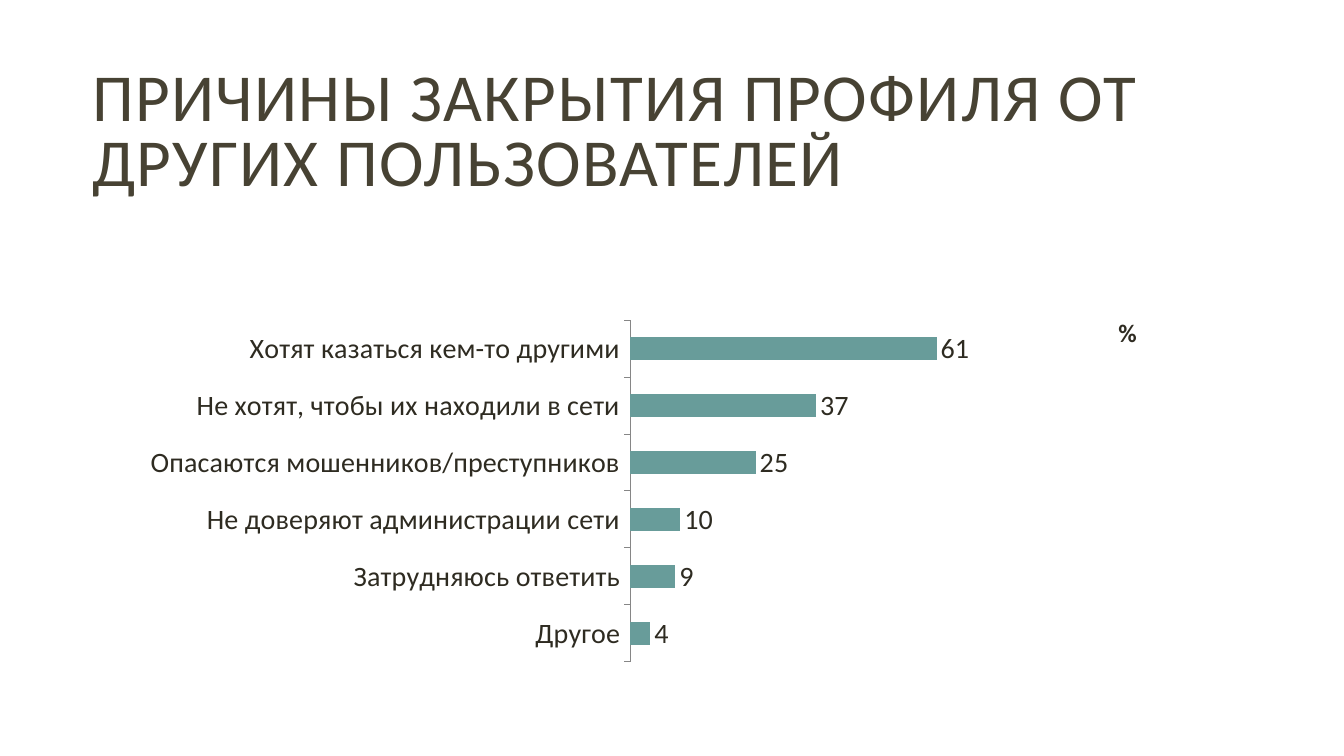
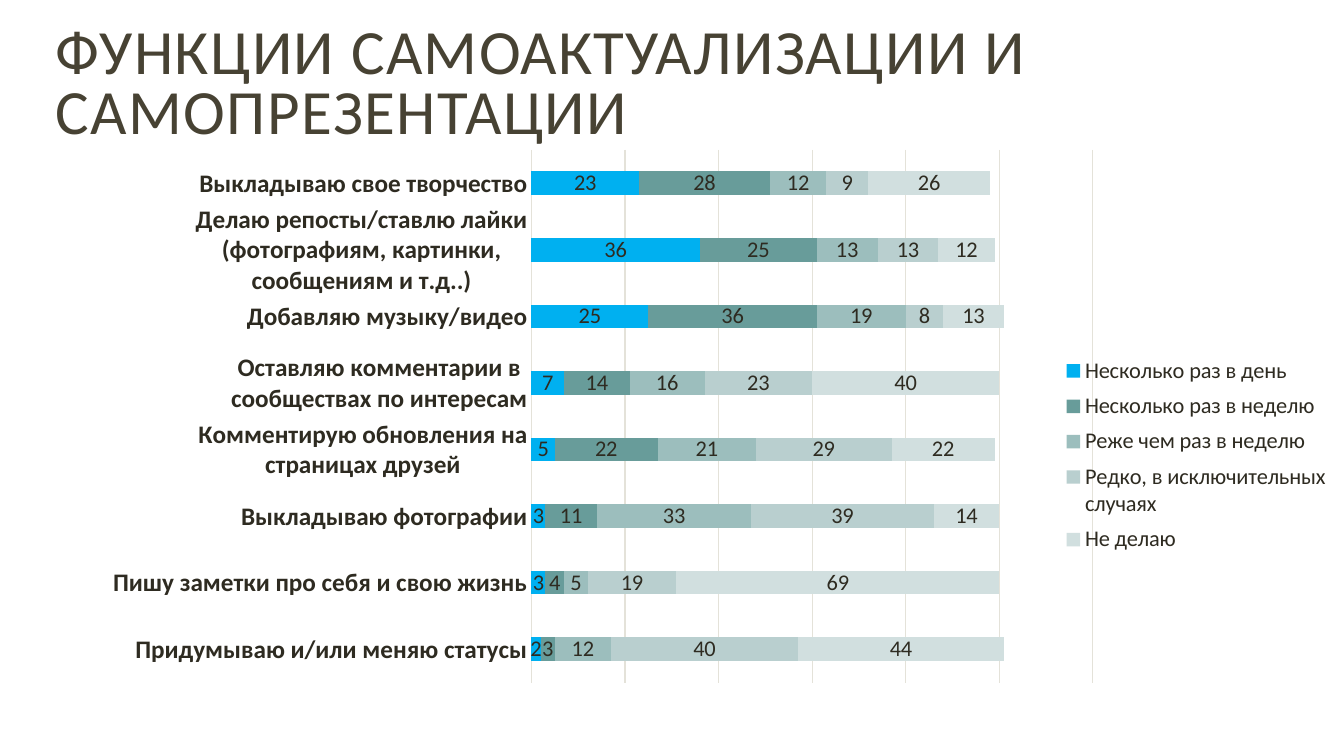
from lxml import etree
from pptx import Presentation
from pptx import util as u
from pptx.chart.data import CategoryChartData
from pptx.dml.color import RGBColor
from pptx.enum import chart as kinds, text
from pptx.oxml.ns import qn

FONT = "Calibri"
COLORS = {
    "title": "474233", "text": "2E2B21", "grid": "E4E2D9", "axis": "868686",
    "daily": "00B0F0", "weekly": "689C9A", "seldom": "9CBEBD",
    "rare": "B9CFCF", "never": "D1DFDF",
}

deck = Presentation()
deck.slide_width, deck.slide_height = u.Inches(13.33), u.Inches(7.5)


def style(font, size, color="text", bold=False):
    font.name, font.size, font.bold = FONT, u.Pt(size), bold
    font.color.rgb = RGBColor.from_string(COLORS[color])


def set_layout(parent, index, shares, inner=False):
    """Place a chart part by shares (x, y, w, h) of the chart's size."""
    for old in parent.findall(qn("c:layout")):
        parent.remove(old)
    layout = etree.Element(qn("c:layout"))
    manual = etree.SubElement(layout, qn("c:manualLayout"))
    settings = [("layoutTarget", "inner")] if inner else []
    settings += [("xMode", "edge"), ("yMode", "edge")]
    settings += zip("xywh", map(str, shares))
    for tag, value in settings:
        etree.SubElement(manual, qn("c:" + tag)).set("val", value)
    parent.insert(index, layout)


# Content: places are percentages of the slide (left, top, width, height)
pages = [
    {
        "title": "ПРИЧИНЫ ЗАКРЫТИЯ ПРОФИЛЯ ОТ ДРУГИХ ПОЛЬЗОВАТЕЛЕЙ",
        "title_size": 48, "title_place": (6.1, 6.9, 79.7, 21.9),
        "kind": kinds.XL_CHART_TYPE.BAR_CLUSTERED,
        "chart_place": (8.4, 33.33, 79.7, 58.67),
        "plot": (0.483, 0.154, 0.469, 0.77),
        "size": 20, "category_size": 20, "gap": 150, "maximum": 100,
        "categories": [
            "Хотят казаться кем-то другими", "Не хотят, чтобы их находили в сети",
            "Опасаются мошенников/преступников", "Не доверяют администрации сети",
            "Затрудняюсь ответить", "Другое",
        ],
        "series": [("Доля, %", "weekly", [61, 37, 25, 10, 9, 4])],
    },
    {
        "title": "ФУНКЦИИ САМОАКТУАЛИЗАЦИИ И САМОПРЕЗЕНТАЦИИ",
        "title_size": 45, "title_place": (3.4, 4.9, 79.7, 13.1),
        "kind": kinds.XL_CHART_TYPE.BAR_STACKED,
        "chart_place": (8.4, 18.13, 91.6, 73.87),
        "plot": (0.34, 0.023, 0.456, 0.954),
        "size": 16, "category_size": 18, "gap": 182, "maximum": 120,
        "categories": [
            "Придумываю и/или меняю статусы", "Пишу заметки про себя и свою жизнь",
            "Выкладываю фотографии", "Комментирую обновления на страницах друзей",
            "Оставляю комментарии в сообществах по интересам", "Добавляю музыку/видео",
            "Делаю репосты/ставлю лайки (фотографиям, картинки, сообщениям и т.д..)",
            "Выкладываю свое творчество",
        ],
        "series": [
            ("Несколько раз в день", "daily", [2, 3, 3, 5, 7, 25, 36, 23]),
            ("Несколько раз в неделю", "weekly", [3, 4, 11, 22, 14, 36, 25, 28]),
            ("Реже чем раз в неделю", "seldom", [12, 5, 33, 21, 16, 19, 13, 12]),
            ("Редко, в исключительных случаях", "rare", [40, 19, 39, 29, 23, 8, 13, 9]),
            ("Не делаю", "never", [44, 69, 14, 22, 40, 13, 12, 26]),
        ],
    },
]

slide_size = [deck.slide_width, deck.slide_height] * 2

for content in pages:
    stacked = content["kind"] == kinds.XL_CHART_TYPE.BAR_STACKED
    page = deck.slides.add_slide(deck.slide_layouts[5])

    # Title
    title = page.shapes.title
    title.left, title.top, title.width, title.height = [
        int(side * share / 100) for side, share in zip(slide_size, content["title_place"])]
    frame = title.text_frame
    frame.word_wrap = True
    frame.auto_size = text.MSO_AUTO_SIZE.NONE
    frame.vertical_anchor = text.MSO_ANCHOR.MIDDLE
    para = frame.paragraphs[0]
    para.alignment, para.line_spacing = text.PP_ALIGN.LEFT, 0.8
    span = para.add_run()
    span.text = content["title"]
    style(span.font, content["title_size"], "title")
    span.font._element.set("spc", "100")

    # Chart
    data = CategoryChartData(number_format="###0")
    data.categories = content["categories"]
    for name, color, values in content["series"]:
        data.add_series(name, values)
    place = [int(side * share / 100)
             for side, share in zip(slide_size, content["chart_place"])]
    chart = page.shapes.add_chart(content["kind"], *place, data).chart
    chart.has_title = False
    style(chart.font, content["size"])
    set_layout(chart._chartSpace.chart.plotArea, 0, content["plot"], inner=True)

    # Bars and their labels
    plot = chart.plots[0]
    plot.gap_width, plot.vary_by_categories = content["gap"], False
    if stacked:
        plot.overlap = 100
    for series, (name, color, values) in zip(plot.series, content["series"]):
        series.format.fill.solid()
        series.format.fill.fore_color.rgb = RGBColor.from_string(COLORS[color])
        labels = series.data_labels
        labels.show_value = True
        labels.number_format, labels.number_format_is_linked = "###0", False
        labels.position = (kinds.XL_LABEL_POSITION.CENTER if stacked
                           else kinds.XL_LABEL_POSITION.OUTSIDE_END)
        style(labels.font, content["size"])

    # Axes
    rows, scale = chart.category_axis, chart.value_axis
    rows.reverse_order = not stacked
    rows.has_major_gridlines = False
    rows.major_tick_mark = kinds.XL_TICK_MARK.NONE if stacked else kinds.XL_TICK_MARK.OUTSIDE
    style(rows.tick_labels.font, content["category_size"], bold=stacked)
    scale.visible = False
    scale.minimum_scale, scale.maximum_scale, scale.major_unit = 0, content["maximum"], 20
    scale.has_major_gridlines = stacked
    lines = [(rows, "grid" if stacked else "axis")]
    if stacked:
        lines.append((scale.major_gridlines, "grid"))
    for part, color in lines:
        part.format.line.width = u.Pt(0.75)
        part.format.line.color.rgb = RGBColor.from_string(COLORS[color])

    # Legend, or the unit beside a single series
    chart.has_legend = stacked
    if stacked:
        legend = chart.legend
        legend.position = kinds.XL_LEGEND_POSITION.RIGHT
        legend.include_in_layout = False
        style(legend.font, content["size"])
        set_layout(legend._element, 1, (0.765, 0.38, 0.23, 0.38))
    else:
        box = page.shapes.add_textbox(*[
            int(side * share / 100) for side, share in zip(slide_size, (81.6, 41.2, 4.6, 5.4))])
        box.text_frame.word_wrap = True
        box.text_frame.vertical_anchor = text.MSO_ANCHOR.MIDDLE
        para = box.text_frame.paragraphs[0]
        para.alignment = text.PP_ALIGN.CENTER
        span = para.add_run()
        span.text = "%"
        style(span.font, 18, bold=True)

deck.save("out.pptx")
